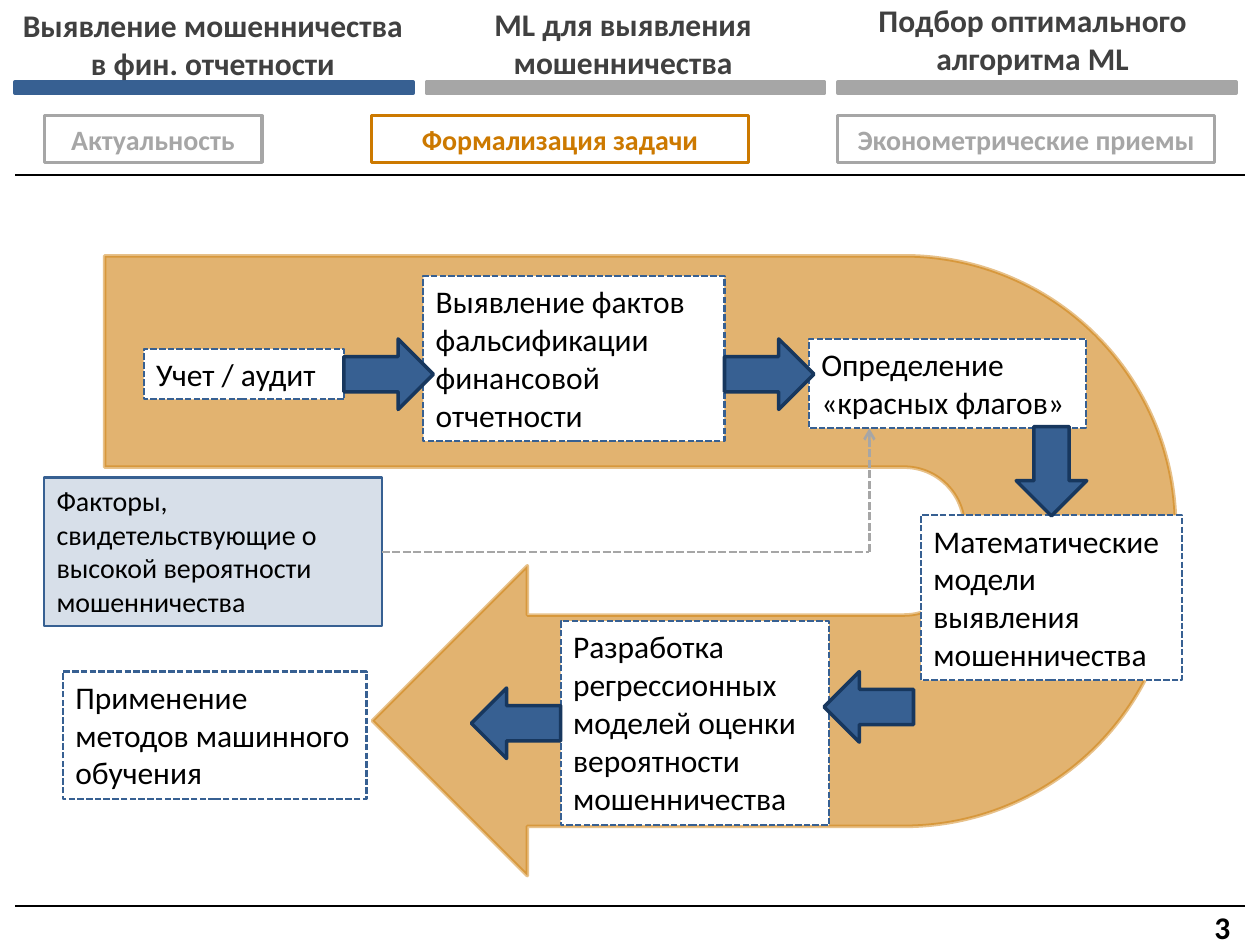
from dataclasses import dataclass

from lxml.etree import SubElement
from pptx import Presentation
from pptx.dml.color import RGBColor
from pptx.enum.dml import MSO_LINE
from pptx.enum.shapes import MSO_CONNECTOR, MSO_SHAPE
from pptx.enum.text import MSO_ANCHOR, PP_ALIGN
from pptx.oxml.ns import qn
from pptx.util import Inches, Pt


@dataclass(frozen=True)
class Theme:
    """Colours, type sizes and font of the slide."""
    blue: str = "376092"
    navy: str = "17375E"
    orange: str = "CC7900"
    gray: str = "A6A6A6"
    dark: str = "404040"
    black: str = "000000"
    white: str = "FFFFFF"
    font: str = "Calibri"
    body: int = 18
    small: int = 16


@dataclass(frozen=True)
class Box:
    """A region in inches, with points measured from its corner."""
    left: float
    top: float
    width: float
    height: float

    def at(self, x, y, *size):
        """Give slide lengths for a place within the region."""
        return [Inches(n) for n in (self.left + x, self.top + y, *size)]


THEME = Theme()


def rgb(color):
    """Turn a hex string into a colour."""
    return RGBColor.from_string(color)


def write(shape, text, size=THEME.body, color=THEME.black, bold=False,
          align=PP_ALIGN.LEFT, anchor=MSO_ANCHOR.TOP):
    """Put formatted text into a shape."""
    frame = shape.text_frame
    frame.word_wrap = True
    frame.vertical_anchor = anchor
    paragraph = frame.paragraphs[0]
    paragraph.alignment = align
    run = paragraph.add_run()
    run.text = text
    run.font.name = THEME.font
    run.font.size = Pt(size)
    run.font.bold = bold
    run.font.color.rgb = rgb(color)


def add_block(slide, place, fill=None, line=THEME.blue, weight=2, dash=None,
              kind=MSO_SHAPE.RECTANGLE, opacity=()):
    """Add a shape; opacity lists fill and line percentages."""
    block = slide.shapes.add_shape(kind, *place)
    block.shadow.inherit = False
    if fill:
        block.fill.solid()
        block.fill.fore_color.rgb = rgb(fill)
    else:
        block.fill.background()
    block.line.color.rgb = rgb(line)
    block.line.width = Pt(weight)
    block.line.dash_style = dash
    for color, percent in zip(block._element.spPr.iter(qn("a:srgbClr")), opacity):
        SubElement(color, qn("a:alpha"), val=str(percent * 1000))
    return block


def add_line(slide, start, end, color=THEME.black, dash=None, arrow=False):
    """Add a straight line, with an arrowhead at its end if asked."""
    line = slide.shapes.add_connector(MSO_CONNECTOR.STRAIGHT, *start, *end)
    line.line.color.rgb = rgb(color)
    line.line.width = Pt(1.5)
    line.line.dash_style = dash
    if arrow:
        SubElement(line.line._get_or_add_ln(), qn("a:tailEnd"), type="arrow")
    SubElement(line._element.spPr, qn("a:effectLst"))
    return line


def add_header(slide, box):
    """Place the section titles, their bars, the tabs and the rule."""
    pitch = 3.265
    sections = [
        ("Выявление мошенничества в фин. отчетности", -0.12, 0.04, 3.38, THEME.blue),
        ("ML для выявления мошенничества", 3.17, 0.03, 3.31, THEME.gray),
        ("Подбор оптимального алгоритма ML", 6.42, 0, 3.31, THEME.gray),
    ]
    for index, (section, x, y, width, color) in enumerate(sections):
        add_block(slide, box.at(index * pitch, 0.69, 3.16, 0.09), color, color)
        heading = slide.shapes.add_textbox(*box.at(x, y, width, 0.71))
        write(heading, section, color=THEME.dark, bold=True, align=PP_ALIGN.CENTER)
    tabs = [
        ("Актуальность", 0.23, 1.73, THEME.gray),
        ("Формализация задачи", 2.83, 2.99, THEME.orange),
        ("Эконометрические приемы", 6.53, 2.99, THEME.gray),
    ]
    for topic, x, width, color in tabs:
        tab = add_block(slide, box.at(x, 0.96, width, 0.37), line=color, weight=1.75)
        write(tab, topic, THEME.small, color, True, PP_ALIGN.CENTER)
    add_line(slide, box.at(box.width, box.height), box.at(0, box.height))


def add_flow(slide, box):
    """Place the U-turn band, the steps, the factors and the arrows."""
    band = add_block(slide, box.at(2.27, -1.76, 4.92, 8.5), THEME.orange,
                     THEME.orange, kind=MSO_SHAPE.U_TURN_ARROW, opacity=(56, 46))
    band.rotation = 90
    for index, value in enumerate((0.341, 0.25, 0.25, 0.438, 0.75)):
        band.adjustments[index] = value

    steps = [
        ("Учет / аудит", 0.79, 0.77, 1.59, 0.4),
        ("Выявление фактов фальсификации финансовой отчетности", 3.01, 0.19, 2.39, 1.31),
        ("Определение «красных флагов»", 6.07, 0.69, 2.2, 0.71),
        ("Математические модели выявления мошенничества", 6.96, 2.09, 2.07, 1.31),
        ("Разработка регрессионных моделей оценки вероятности мошенничества",
         4.1, 2.93, 2.13, 1.62),
        ("Применение методов машинного обучения", 0.15, 3.33, 2.41, 1.01),
    ]
    for step, *place in steps:
        card = add_block(slide, box.at(*place), THEME.white, weight=1.25,
                         dash=MSO_LINE.SQUARE_DOT)
        write(card, step)

    factors = add_block(slide, box.at(0, 1.79, 2.68, 1.18), THEME.blue,
                        weight=1.25, opacity=(20,))
    write(factors, "Факторы, свидетельствующие о высокой вероятности мошенничества",
          THEME.small)

    arrows = [(2.38, 0.69, 0), (5.4, 0.69, 0), (7.64, 1.46, 90),
              (6.19, 3.33, 180), (3.39, 3.46, 180)]
    for x, y, turn in arrows:
        arrow = add_block(slide, box.at(x, y, 0.71, 0.56), THEME.blue, THEME.navy,
                          kind=MSO_SHAPE.RIGHT_ARROW)
        arrow.rotation = turn

    corner = box.at(6.55, 2.38)
    link = add_line(slide, box.at(2.68, 2.38), corner, THEME.gray, MSO_LINE.SQUARE_DOT)
    link.begin_connect(factors, 3)
    add_line(slide, corner, box.at(6.55, 1.4), THEME.gray, MSO_LINE.SQUARE_DOT, True)


def add_footer(slide, box):
    """Place the bottom rule and the page number."""
    add_line(slide, box.at(box.width, 0), box.at(0, 0))
    page = slide.shapes.add_textbox(*box.at(9.42, -0.03, 0.38, 0.4))
    write(page, "3", bold=True)


def main():
    """Build and save the slide."""
    deck = Presentation()
    deck.slide_width, deck.slide_height = Inches(10), Inches(7.5)
    slide = deck.slides.add_slide(deck.slide_layouts[6])
    add_flow(slide, Box(0.35, 2, 9.03, 4.95))
    add_header(slide, Box(0.12, -0.04, 9.76, 1.43))
    add_footer(slide, Box(0.12, 7.19, 9.76, 0.31))
    deck.save("out.pptx")


if __name__ == "__main__":
    main()
